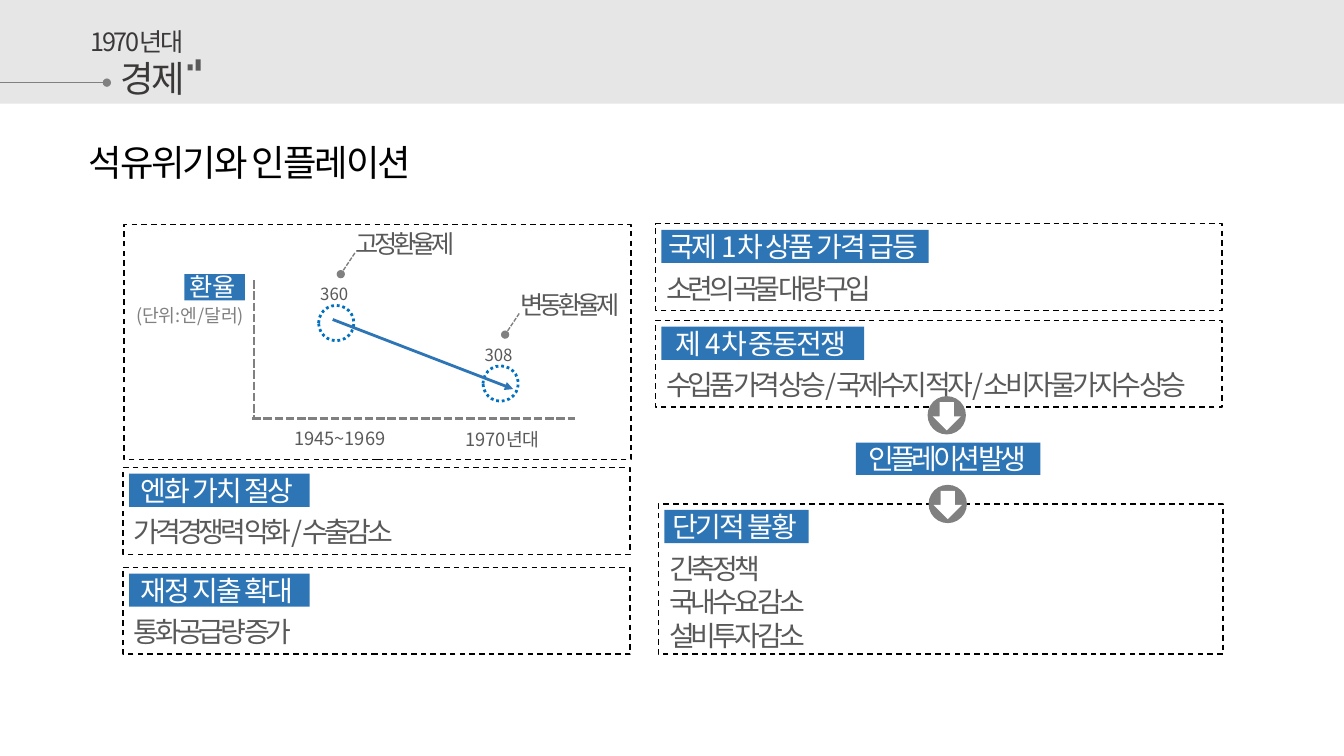
from dataclasses import dataclass

from lxml import etree
from pptx import Presentation
from pptx.dml.color import RGBColor
from pptx.enum.dml import MSO_LINE
from pptx.enum.shapes import MSO_CONNECTOR, MSO_SHAPE
from pptx.enum.text import MSO_ANCHOR, MSO_AUTO_SIZE, PP_ALIGN
from pptx.oxml.ns import qn
from pptx.util import Inches, Pt

RECT, OVAL, DOWN = MSO_SHAPE.RECTANGLE, MSO_SHAPE.OVAL, MSO_SHAPE.DOWN_ARROW
STRAIGHT = MSO_CONNECTOR.STRAIGHT
DASH, DOTS, SHORT = MSO_LINE.DASH, MSO_LINE.ROUND_DOT, MSO_LINE.SQUARE_DOT
LEFT, CENTER = PP_ALIGN.LEFT, PP_ALIGN.CENTER
TOP, MIDDLE = MSO_ANCHOR.TOP, MSO_ANCHOR.MIDDLE
GROW, FIXED = MSO_AUTO_SIZE.SHAPE_TO_FIT_TEXT, MSO_AUTO_SIZE.NONE


@dataclass(frozen=True)
class Theme:
    font: str = "Noto Sans CJK KR"
    black: str = "000000"
    white: str = "FFFFFF"
    band: str = "E7E6E6"
    blue: str = "2E75B6"
    ring: str = "0070C0"
    gray: str = "808080"
    body: str = "595959"
    dark: str = "3B3838"
    title: int = 26
    head: int = 20
    label: int = 18
    axis: int = 13
    value: int = 12
    snug: float = -1.5
    tight: float = -3
    pitch: float = 19.5


@dataclass(frozen=True)
class Panel:
    left: float
    top: float
    width: float
    height: float
    bar: float
    pad: float
    room: float
    head: str
    body: str


@dataclass(frozen=True)
class Rate:
    left: float
    top: float
    value: str
    system: str


T = Theme()
PANELS = [
    Panel(1.22, 5.63, 5.03, 0.86, 1.79, 0.06, 3.94, "재정 지출 확대", "통화공급량 증가"),
    Panel(1.22, 4.64, 5.03, 0.86, 1.79, 0.06, 3.94, "엔화 가치 절상", "가격경쟁력 악화/수출감소"),
    Panel(6.5, 2.22, 5.62, 0.86, 2.65, 0.24, 3.94, "국제 1차 상품 가격 급등", "소련의 곡물 대량 구입"),
    Panel(6.5, 3.18, 5.62, 0.86, 2.01, 0.24, 5.77, "제 4차 중동전쟁",
          "수입품 가격 상승/국제수지 적자/소비자 물가지수 상승"),
    Panel(6.53, 5, 5.6, 1.49, 1.43, 0.17, 3.94, "단기적 불황",
          "긴축정책\n국내수요 감소\n설비투자 감소"),
]
RATES = [Rate(3.16, 3.03, "360", "고정환율제"), Rate(4.79, 3.63, "308", "변동환율제")]
STEPS = [(9.2, 3.93), (9.21, 4.81)]

deck = Presentation()
deck.slide_width, deck.slide_height = Inches(13.33), Inches(7.5)
shapes = deck.slides.add_slide(deck.slide_layouts[6]).shapes


def rgb(code: str) -> RGBColor:
    return RGBColor.from_string(code)


def shape(kind: MSO_SHAPE, left: float, top: float, width: float, height: float,
          fill: str = "", line: str = "", weight: float = 1,
          dash: MSO_LINE = DASH) -> None:
    item = shapes.add_shape(kind, Inches(left), Inches(top), Inches(width), Inches(height))
    item.shadow.inherit = False
    if fill:
        item.fill.solid()
        item.fill.fore_color.rgb = rgb(fill)
    else:
        item.fill.background()
    if line:
        item.line.color.rgb = rgb(line)
        item.line.width = Pt(weight)
        item.line.dash_style = dash
    else:
        item.line.fill.background()


def text(words: str, left: float, top: float, width: float, height: float, *,
         size: float, color: str, align: PP_ALIGN = CENTER, track: float = 0,
         pitch: float = 0, anchor: MSO_ANCHOR = TOP, fit: MSO_AUTO_SIZE = GROW) -> None:
    """Put one paragraph per line of words; track and pitch are in points."""
    box = shapes.add_textbox(Inches(left), Inches(top), Inches(width), Inches(height))
    frame = box.text_frame
    frame.text = words
    frame.word_wrap = True
    frame.auto_size = fit
    frame.vertical_anchor = anchor
    for para in frame.paragraphs:
        para.alignment = align
        if pitch:
            para.line_spacing = Pt(pitch)
        for run in para.runs:
            run.font.size = Pt(size)
            run.font.color.rgb = rgb(color)
            run.font.name = T.font
            props = run.font._element
            etree.SubElement(props, qn("a:ea")).set("typeface", T.font)
            if track:
                props.set("spc", str(int(track * 100)))


def line(left: float, top: float, right: float, bottom: float, color: str,
         weight: float, dash: MSO_LINE | None = None, tail: str = "") -> None:
    item = shapes.add_connector(STRAIGHT, Inches(left), Inches(top),
                                Inches(right), Inches(bottom))
    item.line.color.rgb = rgb(color)
    item.line.width = Pt(weight)
    if dash:
        item.line.dash_style = dash
    props = item._element.spPr
    if tail:
        etree.SubElement(props.find(qn("a:ln")), qn("a:tailEnd")).set("type", tail)
    etree.SubElement(props, qn("a:effectLst"))


def panel(p: Panel) -> None:
    left, top = p.left + 0.06, p.top + 0.06
    shape(RECT, left, top, p.bar, 0.33, fill=T.blue)
    text(p.head, left - p.pad / 2 - 0.02, top + 0.01, p.bar + p.pad, 0.38,
         size=T.head, color=T.white, track=T.snug, pitch=T.pitch)
    shape(RECT, p.left, p.top, p.width, p.height, line=T.black)
    text(p.body, p.left + 0.01, p.top + 0.42, p.room, 0.44,
         size=T.head, color=T.body, align=LEFT, track=T.tight)


def rate(r: Rate) -> None:
    """Draw a ringed point with its value and its exchange system."""
    text(r.value, r.left - 0.36, r.top - 0.26, 1.03, 0.3, size=T.value, color=T.body)
    shape(OVAL, r.left, r.top, 0.35, 0.35, line=T.ring, weight=2, dash=DOTS)
    line(r.left + 0.36, r.top - 0.52, r.left + 0.22, r.top - 0.31,
         T.gray, 1, SHORT, "oval")
    text(r.system, r.left + 0.27, r.top - 0.81, 1.19, 0.4,
         size=T.label, color=T.body, align=LEFT, track=T.tight)


def header() -> None:
    shape(RECT, 0, 0, 13.33, 1.03, fill=T.band)
    line(0, 0.82, 1.06, 0.82, T.gray, 0.5, tail="oval")
    text("경제", 1.06, 0.67, 0.91, 0.4, size=T.title, color=T.dark,
         track=T.snug, pitch=T.pitch)
    text("1970년대", 0.49, 0.24, 1.74, 0.4, size=T.label, color=T.dark,
         track=T.snug, pitch=T.pitch)
    shape(RECT, 1.94, 0.59, 0.05, 0.11, fill=T.body)
    shape(RECT, 1.86, 0.64, 0.05, 0.06, fill=T.body)
    text("석유위기와 인플레이션", 0.7, 1.5, 3.56, 0.38, size=T.title, color=T.black,
         track=T.snug, pitch=T.pitch)


def graph() -> None:
    line(2.52, 2.78, 2.52, 4.15, T.gray, 2, SHORT)
    line(2.5, 4.15, 5.7, 4.15, T.gray, 2, SHORT)
    text("1945~1969", 2.78, 4.19, 1.18, 0.32, size=T.axis, color=T.body)
    text("1970년대", 4.47, 4.2, 1.03, 0.32, size=T.axis, color=T.body)
    shape(RECT, 1.83, 2.72, 0.6, 0.26, fill=T.blue)
    text("환율", 1.44, 2.73, 1.34, 0.23, size=T.label, color=T.white,
         anchor=MIDDLE, fit=FIXED)
    text("(단위:엔/달러)", 1.17, 2.97, 1.43, 0.32, size=T.axis, color=T.gray)
    for item in RATES:
        rate(item)
    line(3.3, 3.17, 5.09, 3.86, T.blue, 2, tail="triangle")
    shape(RECT, 1.23, 2.23, 5.03, 2.33, line=T.black)


def main() -> None:
    header()
    graph()
    for item in PANELS:
        panel(item)
    shape(RECT, 8.49, 4.39, 1.83, 0.32, fill=T.blue)
    text("인플레이션 발생", 7.77, 4.33, 3.25, 0.44, size=T.head, color=T.white,
         track=T.tight)
    for left, top in STEPS:
        shape(OVAL, left, top, 0.38, 0.38, fill=T.gray)
        shape(DOWN, left + 0.05, top + 0.06, 0.28, 0.28, fill=T.white)
    deck.save("out.pptx")


if __name__ == "__main__":
    main()
